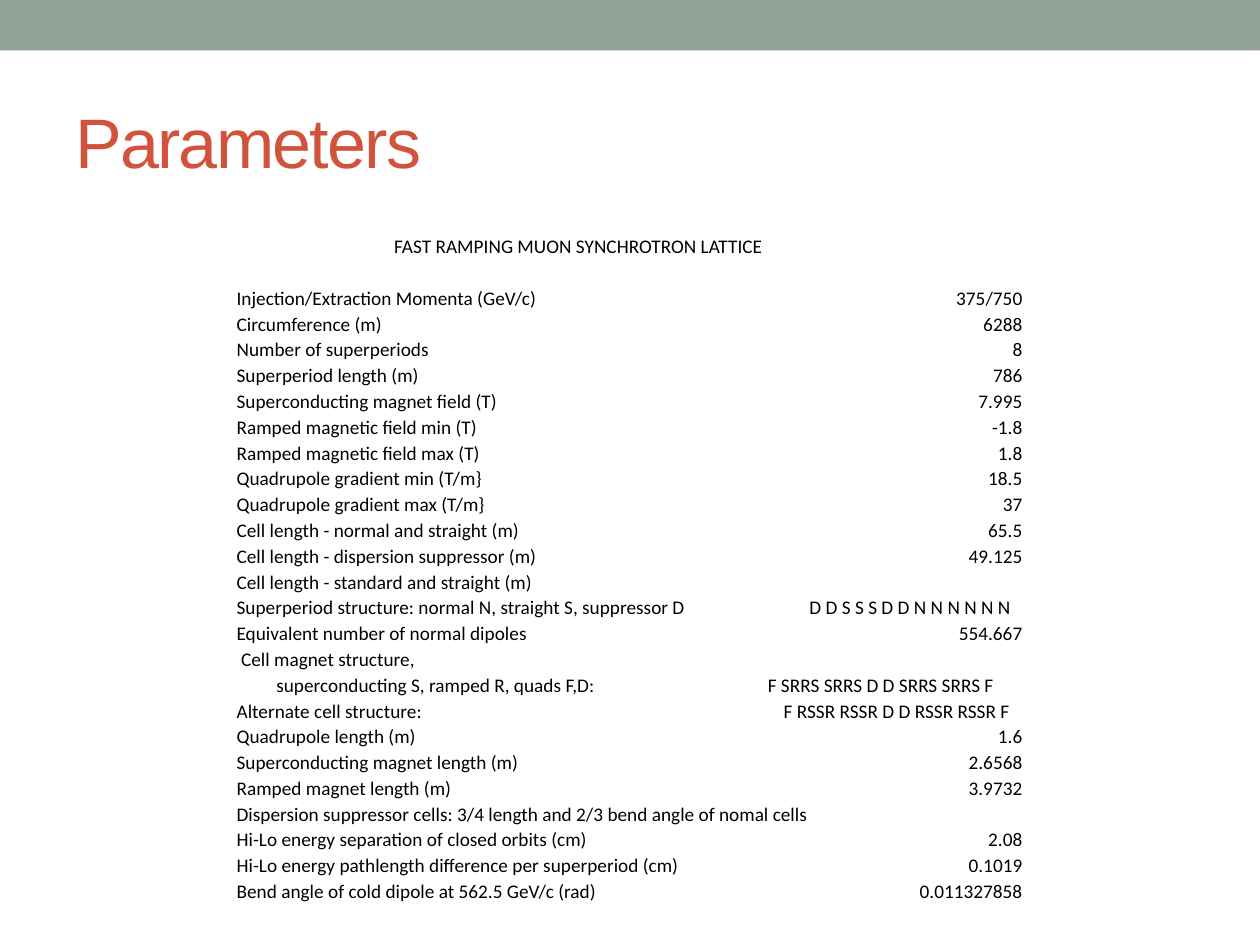
import pptx
import pptx.util
import pptx.dml.color
import pptx.enum.shapes
import pptx.enum.text

Cm = pptx.util.Cm
Pt = pptx.util.Pt
COLORS = {"band": "93A299", "title": "D2533C", "text": "000000"}
RIGHT = pptx.enum.text.PP_ALIGN.RIGHT
LEFT = pptx.enum.text.PP_ALIGN.LEFT

ROWS = [
    [(1, 3, "FAST RAMPING MUON SYNCHROTRON LATTICE", LEFT, 0)],
    [],
]
for label, span, value in [
    ("Injection/Extraction Momenta (GeV/c)", 3, "375/750"),
    ("Circumference (m)", 2, "6288"),
    ("Number of superperiods", 2, "8"),
    ("Superperiod length (m)", 2, "786"),
    ("Superconducting magnet field (T)", 2, "7.995"),
    ("Ramped magnetic field min (T)", 2, "-1.8"),
    ("Ramped magnetic field max (T)", 2, "1.8"),
    ("Quadrupole gradient min (T/m}", 2, "18.5"),
    ("Quadrupole gradient max (T/m}", 2, "37"),
    ("Cell length - normal and straight (m)", 2, "65.5"),
    ("Cell length - dispersion suppressor (m)", 3, "49.125"),
    ("Cell length - standard and straight (m)", 2, ""),
    ("Superperiod structure: normal N, straight S, suppressor D", 3,
     ("D D S S S D D N N N N N N", 2.02)),
    ("Equivalent number of normal dipoles", 2, "554.667"),
    ("Cell magnet structure,", 2, ""),
    ("superconducting S, ramped R, quads F,D:", 3,
     ("F SRRS SRRS D D SRRS SRRS F", 1.18)),
    ("Alternate cell structure:", 2, ("F RSSR RSSR D D RSSR RSSR F", 1.5)),
    ("Quadrupole length (m)", 2, "1.6"),
    ("Superconducting magnet length (m)", 2, "2.6568"),
    ("Ramped magnet length (m)", 2, "3.9732"),
    ("Dispersion suppressor cells: 3/4 length and 2/3 bend angle of nomal cells", 4, ""),
    ("Hi-Lo energy separation of closed orbits (cm)", 3, "2.08"),
    ("Hi-Lo energy pathlength difference per superperiod (cm)", 3, "0.1019"),
    ("Bend angle of cold dipole at 562.5 GeV/c (rad)", 3, "0.011327858"),
]:
    indent = {"Cell magnet structure,": 0.09,
              "superconducting S, ramped R, quads F,D:": 0.8}.get(label, 0)
    entries = [(0, span, label, LEFT, indent)]
    if isinstance(value, tuple):
        entries.append((3, 2, value[0], LEFT, value[1]))
    elif value:
        entries.append((4, 1, value, RIGHT, 0))
    ROWS.append(entries)


def add_run(paragraph, text, font_name, size, color):
    run = paragraph.add_run()
    run.text = text
    run.font.name = font_name
    run.font.size = Pt(size)
    run.font.color.rgb = pptx.dml.color.RGBColor.from_string(COLORS[color])
    return run


deck = pptx.Presentation()
deck.slide_width = Cm(25.4)
deck.slide_height = Cm(19.05)
slide = deck.slides.add_slide(deck.slide_layouts[6])

band = slide.shapes.add_shape(
    pptx.enum.shapes.MSO_SHAPE.RECTANGLE, 0, 0, deck.slide_width, Cm(1.02))
band.shadow.inherit = False
band.fill.solid()
band.fill.fore_color.rgb = pptx.dml.color.RGBColor.from_string(COLORS["band"])
band.line.fill.background()

title = slide.shapes.add_textbox(Cm(1.27), Cm(1.47), Cm(22.86), Cm(2.74)).text_frame
title.word_wrap = True
title.vertical_anchor = pptx.enum.text.MSO_ANCHOR.MIDDLE
heading = add_run(title.paragraphs[0], "Parameters", "Arial", 40, "title")
heading.font._element.set("spc", "-100")

parameters = slide.shapes.add_table(
    len(ROWS), 5, Cm(4.75), Cm(4.7), Cm(15.88), Cm(13.54)).table
parameters.first_row = False
parameters.horz_banding = False

for row, entries in enumerate(ROWS):
    for column in range(5):
        cell = parameters.cell(row, column)
        cell.fill.background()
        cell.vertical_anchor = pptx.enum.text.MSO_ANCHOR.BOTTOM
        cell.margin_left = cell.margin_right = cell.margin_top = Cm(0.02)
        cell.margin_bottom = 0
    for column, span, text, alignment, indent in entries:
        cell = parameters.cell(row, column)
        if span > 1:
            cell.merge(parameters.cell(row, column + span - 1))
        paragraph = cell.text_frame.paragraphs[0]
        paragraph.alignment = alignment
        if indent:
            paragraph._p.get_or_add_pPr().set("marL", str(Cm(indent)))
        add_run(paragraph, text, "Calibri", 11, "text")
    for cell in parameters.rows[row].cells:
        paragraph = cell.text_frame.paragraphs[0]
        if not paragraph.runs:
            ending = paragraph._p.makeelement(
                pptx.oxml.ns.qn("a:endParaRPr"), {"sz": "1100"})
            paragraph._p.append(ending)

deck.save("out.pptx")
